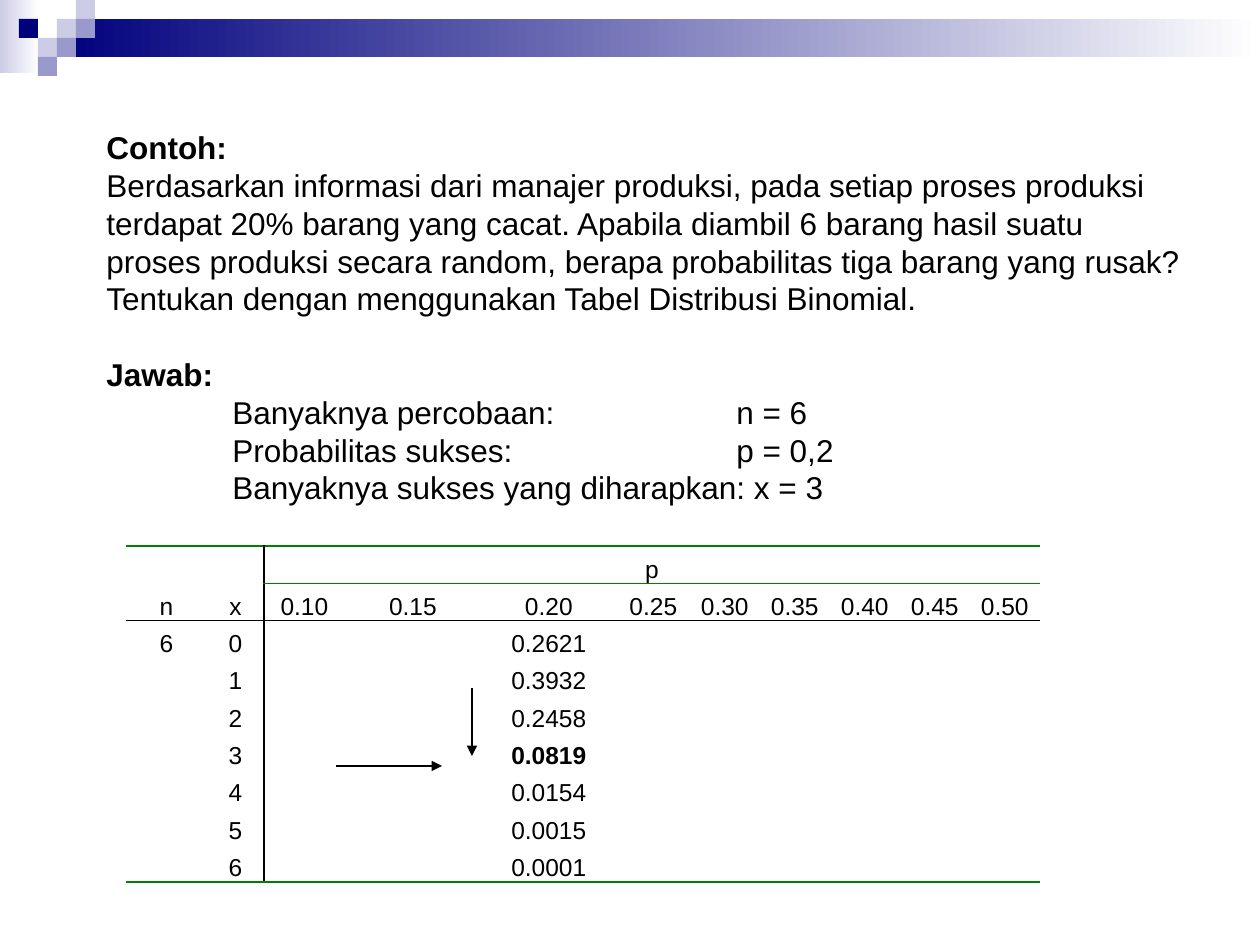
from dataclasses import dataclass

from lxml import etree
from pptx import Presentation
from pptx import util as u
from pptx.dml.color import RGBColor
from pptx.enum import shapes, text
from pptx.oxml.ns import qn


@dataclass(frozen=True)
class Theme:
    font: str = "Arial"
    body: int = 18
    cell: int = 14
    leading: float = 21.6
    ink: str = "000000"
    paper: str = "FFFFFF"
    navy: str = "00007D"
    violet: str = "9999CC"
    lilac: str = "CCCCE6"
    green: str = "008000"


T = Theme()
TILE = 19
TILES = [(3, 1, T.lilac), (4, 0, T.lilac), (4, 1, T.violet), (2, 2, T.lilac),
         (1, 1, T.navy), (3, 2, T.violet), (2, 3, T.violet)]
QUESTION = (
    "Berdasarkan informasi dari manajer produksi, pada setiap proses produksi "
    "terdapat 20% barang yang cacat. Apabila diambil 6 barang hasil suatu "
    "proses produksi secara random, berapa probabilitas tiga barang yang rusak? "
    "Tentukan dengan menggunakan Tabel Distribusi Binomial.")
GIVEN = ["\tBanyaknya percobaan:\tn = 6",
         "\tProbabilitas sukses:\tp = 0,2",
         "\tBanyaknya sukses yang diharapkan: x = 3"]
P_HEADS = ["0.10", "0.15", "0.20", "0.25", "0.30", "0.35", "0.40", "0.45", "0.50"]
PROBS = ["0.2621", "0.3932", "0.2458", "0.0819", "0.0154", "0.0015", "0.0001"]
COLS = [81, 57, 81, 136, 136, 73] + [70] * 5
N_ROWS = 2 + len(PROBS)
P_COL = 2
HIT_COL = P_COL + P_HEADS.index("0.20")
HIT_X = 3


def px(n):
    return u.Emu(n * 914400 // 126)


def rgb(color):
    return RGBColor.from_string(color)


def write(p, words, size=T.body, bold=False, align=None, leading=None, before=0, tabs=()):
    if tabs:
        stops = etree.SubElement(p._p.get_or_add_pPr(), qn("a:tabLst"))
        for pos in tabs:
            etree.SubElement(stops, qn("a:tab"), pos=str(px(pos)), algn="l")
    p.alignment = align
    if leading:
        p.line_spacing = u.Pt(leading)
    if before:
        p.space_before = u.Pt(before)
    if not words:
        etree.SubElement(p._p, qn("a:endParaRPr"), sz=str(size * 100))
        return
    r = p.add_run()
    r.text = words
    f = r.font
    f.name, f.size, f.bold = T.font, u.Pt(size), bold
    f.color.rgb = rgb(T.ink)


def add_rect(s, x, y, w, h, color, fade_to=None):
    sp = s.shapes.add_shape(shapes.MSO_SHAPE.RECTANGLE, px(x), px(y), px(w), px(h))
    sp.shadow.inherit = False
    sp.line.fill.background()
    if fade_to:
        sp.fill.gradient()
        sp.fill.gradient_angle = 0
        for stop, c in zip(sp.fill.gradient_stops, (color, fade_to)):
            stop.color.rgb = rgb(c)
    else:
        sp.fill.solid()
        sp.fill.fore_color.rgb = rgb(color)


def add_header_band(s):
    add_rect(s, 0, 0, 39, 73, T.lilac, T.paper)
    add_rect(s, 3 * TILE, TILE, 1260 - 3 * TILE, 2 * TILE, T.navy, T.paper)
    for col, row, color in TILES:
        add_rect(s, col * TILE, row * TILE, TILE, TILE, color)


def add_problem(s):
    tf = s.shapes.add_textbox(px(94), px(122), px(1103), px(432)).text_frame
    tf.word_wrap = True
    write(tf.paragraphs[0], "Contoh:", bold=True, leading=T.leading)
    write(tf.add_paragraph(), QUESTION, leading=T.leading)
    write(tf.add_paragraph(), "Jawab:", bold=True, leading=T.leading, before=T.leading)
    for line in GIVEN:
        write(tf.add_paragraph(), line, leading=T.leading, tabs=(126, 630))


def cell_text(row, col):
    if row == 0:
        return {0: "n", 1: "x", P_COL: "p"}.get(col, "")
    if row == 1:
        return P_HEADS[col - P_COL] if col >= P_COL else ""
    x = row - 2
    return {0: "6" if x == 0 else "", 1: str(x), HIT_COL: PROBS[x]}.get(col, "")


def rule_above(row, col):
    if row in (0, N_ROWS):
        return T.green, 1.5
    if row == 1 and col >= P_COL:
        return T.green, 1
    if row == 2:
        return T.ink, 1
    return None


def set_borders(cell, row, col):
    stem = (T.ink, 1)
    last_header = row == 0 and col < P_COL
    edges = {"L": stem if col == P_COL else None,
             "R": stem if col == P_COL - 1 else None,
             "T": rule_above(row, col),
             "B": rule_above(2 if last_header else row + 1, col)}
    tcPr = cell._tc.get_or_add_tcPr()
    for side, edge in edges.items():
        ln = etree.SubElement(tcPr, qn("a:ln" + side))
        if edge:
            color, width = edge
            ln.set("w", str(u.Pt(width)))
            fill = etree.SubElement(ln, qn("a:solidFill"))
            etree.SubElement(fill, qn("a:srgbClr"), val=color)
        else:
            etree.SubElement(ln, qn("a:noFill"))


def add_binomial_table(s):
    height = px(336)
    frame = s.shapes.add_table(N_ROWS, len(COLS), px(126), px(546), px(sum(COLS)), height)
    tbl = frame.table
    tbl.first_row = tbl.horz_banding = False
    for column, w in zip(tbl.columns, COLS):
        column.width = px(w)
    for line in tbl.rows:
        line.height = height // N_ROWS
    for col in range(P_COL):
        tbl.cell(0, col).merge(tbl.cell(1, col))
    tbl.cell(0, P_COL).merge(tbl.cell(0, len(COLS) - 1))
    for row in range(N_ROWS):
        for col in range(len(COLS)):
            cell = tbl.cell(row, col)
            cell.margin_left = cell.margin_right = cell.margin_top = px(1)
            cell.margin_bottom = 0
            cell.vertical_anchor = text.MSO_ANCHOR.BOTTOM
            set_borders(cell, row, col)
            cell.fill.background()
            write(cell.text_frame.paragraphs[0], cell_text(row, col), size=T.cell,
                  bold=(row, col) == (HIT_X + 2, HIT_COL), align=text.PP_ALIGN.CENTER)


def add_arrow(s, x1, y1, x2, y2):
    c = s.shapes.add_connector(shapes.MSO_CONNECTOR.STRAIGHT, px(x1), px(y1), px(x2), px(y2))
    c.line.color.rgb = rgb(T.ink)
    c.line.width = u.Pt(0.75)
    etree.SubElement(c.line._get_or_add_ln(), qn("a:tailEnd"), type="triangle")
    etree.SubElement(c._element.spPr, qn("a:effectLst"))


def main():
    prs = Presentation()
    prs.slide_width, prs.slide_height = px(1260), px(945)
    s = prs.slides.add_slide(prs.slide_layouts[6])
    add_header_band(s)
    add_problem(s)
    add_binomial_table(s)
    add_arrow(s, 472, 688, 472, 756)
    add_arrow(s, 336, 766, 442, 766)
    prs.save("out.pptx")


if __name__ == "__main__":
    main()
